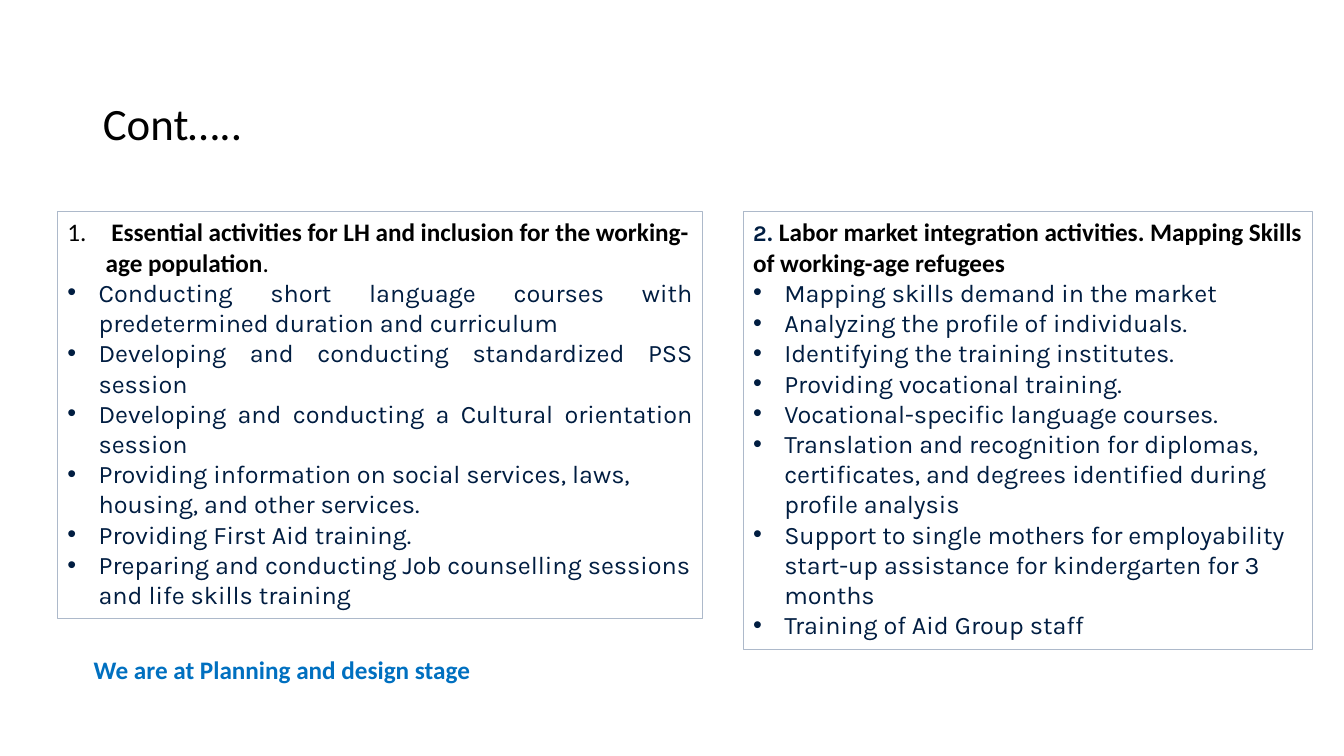
from dataclasses import dataclass

from lxml import etree
from pptx import Presentation
from pptx.dml.color import RGBColor
from pptx.enum.shapes import MSO_SHAPE
from pptx.enum.text import MSO_ANCHOR, MSO_AUTO_SIZE, PP_ALIGN
from pptx.oxml.ns import qn
from pptx.util import Pt

RECT = MSO_SHAPE.RECTANGLE
TOP, BOTTOM = MSO_ANCHOR.TOP, MSO_ANCHOR.BOTTOM
GROW, FIXED = MSO_AUTO_SIZE.SHAPE_TO_FIT_TEXT, MSO_AUTO_SIZE.NONE
LEFT, JUSTIFY = PP_ALIGN.LEFT, PP_ALIGN.JUSTIFY
TITLE_ONLY = 5
PX = 9144


@dataclass(frozen=True)
class Theme:
    black: str = "000000"
    navy: str = "001D41"
    blue: str = "0070C0"
    edge: str = "ADB9CA"
    main: str = "Calibri"
    list: str = "Karla"
    title: int = 32
    body: int = 18
    small: int = 16
    rule: float = 0.75


THEME = Theme()

STYLES = {
    "title": (THEME.main, THEME.title, THEME.black, False),
    "plain": (THEME.main, THEME.body, THEME.black, False),
    "head": (THEME.main, THEME.body, THEME.black, True),
    "digit": (THEME.list, THEME.small, THEME.navy, True),
    "dot": (THEME.main, THEME.body, THEME.navy, True),
    "item": (THEME.list, THEME.body, THEME.navy, False),
    "note": (THEME.main, THEME.body, THEME.blue, True),
}
MARKS = {
    "bullet": (31, "a:buChar", {"char": "•"}),
    "number": (38, "a:buAutoNum", {"type": "arabicPeriod"}),
}

TITLE = ("Cont…..", (92, 47, 430, 107))
NOTE = ("We are at Planning and design stage", (83, 644, 409, 40))
PANELS = [
    {
        "box": (57, 210, 640, 404),
        "mark": "number",
        "head": [
            (" ", "plain"),
            ("Essential activities for LH and inclusion for the working-age population", "head"),
            (".", "plain"),
        ],
        "items": [
            ("Conducting short language courses with predetermined duration and curriculum", JUSTIFY),
            ("Developing and conducting standardized PSS session", JUSTIFY),
            ("Developing and conducting a Cultural orientation session", JUSTIFY),
            ("Providing information on social services, laws, housing, and other services.", LEFT),
            ("Providing First Aid training.", LEFT),
            ("Preparing and conducting Job counselling sessions and life skills training", LEFT),
        ],
    },
    {
        "box": (737, 210, 565, 434),
        "mark": None,
        "head": [
            ("2", "digit"),
            (". ", "dot"),
            ("Labor market integration activities. Mapping Skills of working-age refugees", "head"),
        ],
        "items": [
            ("Mapping skills demand in the market", LEFT),
            ("Analyzing the profile of individuals.", LEFT),
            ("Identifying the training institutes.", LEFT),
            ("Providing vocational training.", LEFT),
            ("Vocational-specific language courses.", LEFT),
            ("Translation and recognition for diplomas, certificates, and degrees "
             "identified during profile analysis", LEFT),
            ("Support to single mothers for employability start-up assistance "
             "for kindergarten for 3 months", LEFT),
            ("Training of Aid Group staff", LEFT),
        ],
    },
]


def scale(box):
    return [n * PX for n in box]


def frame(shape, anchor, fit):
    text = shape.text_frame
    text.word_wrap = True
    text.auto_size = fit
    text.vertical_anchor = anchor
    return text


def write(para, runs, align=LEFT, mark=None):
    para.alignment = align
    for words, style in runs:
        run = para.add_run()
        run.text = words
        font = run.font
        font.name, size, color, font.bold = STYLES[style]
        font.size = Pt(size)
        font.color.rgb = RGBColor.from_string(color)
    if mark:
        indent, tag, attrs = MARKS[mark]
        props = para._p.get_or_add_pPr()
        props.set("marL", str(indent * PX))
        props.set("indent", str(-indent * PX))
        if mark == "bullet":
            etree.SubElement(props, qn("a:buFont"), typeface="Arial")
        etree.SubElement(props, qn(tag), attrs)


def add_title(slide):
    words, box = TITLE
    title = slide.shapes.title
    title.left, title.top, title.width, title.height = scale(box)
    para = frame(title, BOTTOM, FIXED).paragraphs[0]
    para.line_spacing = 0.9
    write(para, [(words, "title")])


def add_panel(slide, panel):
    shape = slide.shapes.add_shape(RECT, *scale(panel["box"]))
    shape.shadow.inherit = False
    shape.fill.background()
    shape.line.color.rgb = RGBColor.from_string(THEME.edge)
    shape.line.width = Pt(THEME.rule)
    text = frame(shape, TOP, GROW)
    write(text.paragraphs[0], panel["head"], mark=panel["mark"])
    for words, align in panel["items"]:
        write(text.add_paragraph(), [(words, "item")], align, "bullet")


def add_note(slide):
    words, box = NOTE
    shape = slide.shapes.add_textbox(*scale(box))
    write(frame(shape, TOP, GROW).paragraphs[0], [(words, "note")])


def main():
    deck = Presentation()
    deck.slide_width, deck.slide_height = scale((1333, 750))
    slide = deck.slides.add_slide(deck.slide_layouts[TITLE_ONLY])
    add_title(slide)
    for panel in PANELS:
        add_panel(slide, panel)
    add_note(slide)
    deck.save("out.pptx")


if __name__ == "__main__":
    main()
